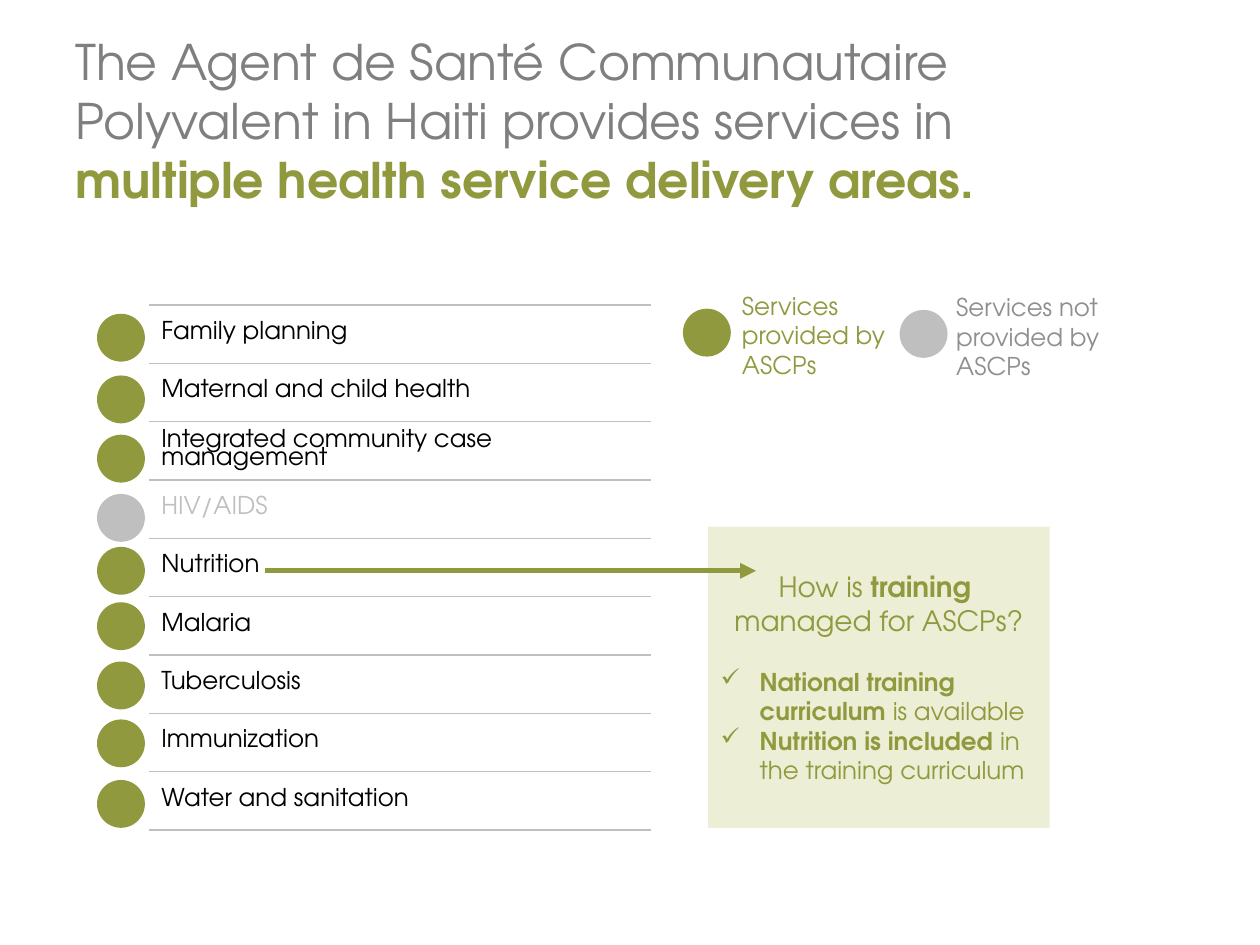
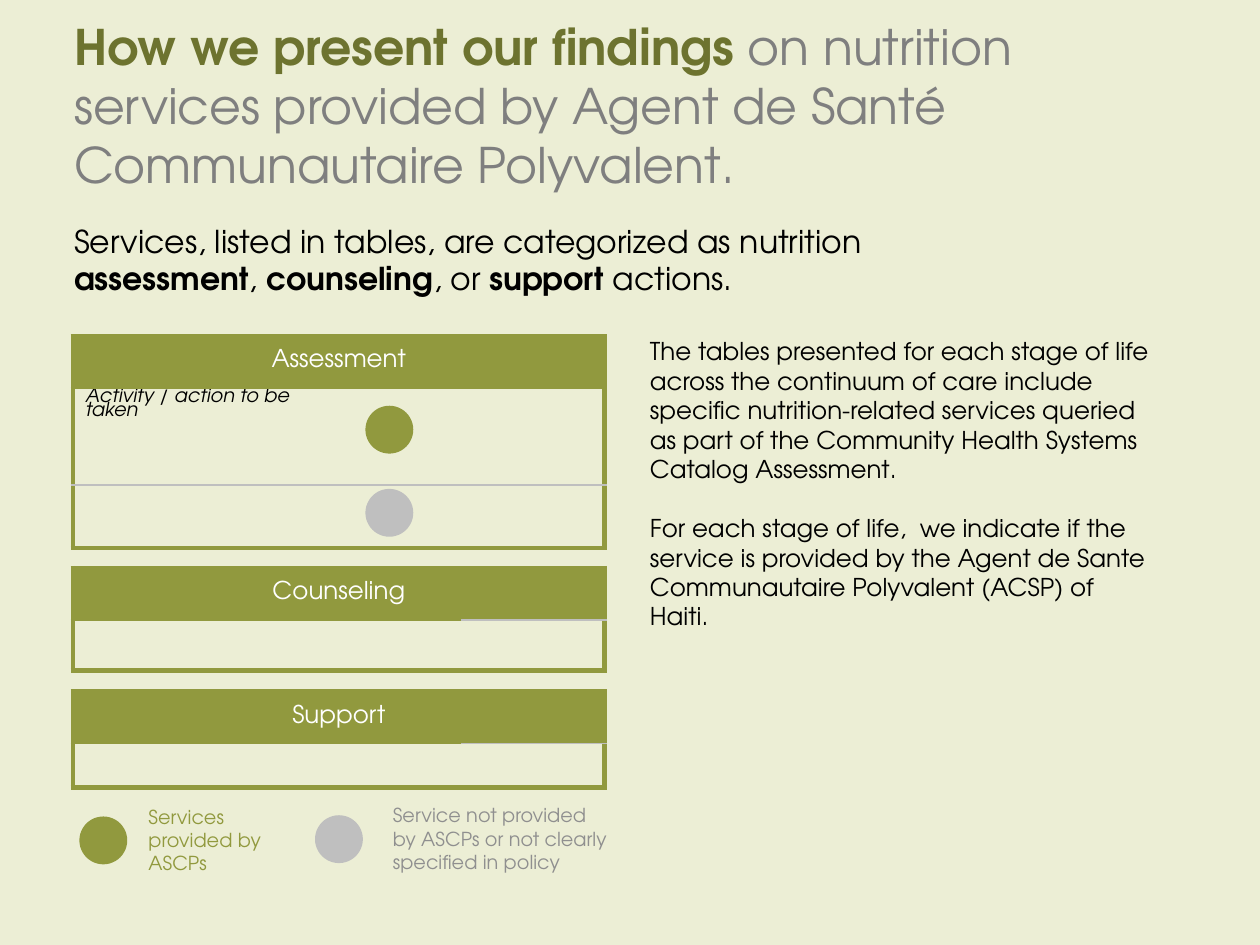
from lxml import etree
from pptx import Presentation
from pptx.dml.color import RGBColor
from pptx.enum.shapes import MSO_CONNECTOR, MSO_SHAPE
from pptx.enum.text import MSO_ANCHOR as ANCHOR, PP_ALIGN as ALIGN
from pptx.oxml.ns import qn
from pptx.util import Inches, Pt

FONT = "TeX Gyre Adventor"
GREEN = RGBColor(0x91, 0x99, 0x3E)
DARK_GREEN = RGBColor(0x6D, 0x73, 0x2F)
PALE_GREEN = RGBColor(0xEC, 0xEE, 0xD5)
TITLE_GRAY = RGBColor(0x7F, 0x7F, 0x7F)
LEGEND_GRAY = RGBColor(0x8F, 0x8F, 0x8F)
GRAY = RGBColor(0xBF, 0xBF, 0xBF)
BLACK = RGBColor(0, 0, 0)
WHITE = RGBColor(0xFF, 0xFF, 0xFF)

DOT_SIZE = 0.38
PARAGRAPH_GAP = 17
PLAIN_TABLE_STYLE = "{2D5ABB26-0587-4C30-8999-92F81FD0307C}"

SERVICES = [
    ("Family planning", 2.49),
    ("Maternal and child health", 2.98),
    ("Integrated community case management", 3.45),
    ("HIV/AIDS", 3.92),
    ("Nutrition", 4.34),
    ("Malaria", 4.78),
    ("Tuberculosis", 5.25),
    ("Immunization", 5.71),
    ("Water and sanitation", 6.19),
]
NOT_PROVIDED = {"HIV/AIDS"}


def write_runs(paragraph, marked_text, size, color, bold_color=None):
    """Write text whose **marked** parts are bold, optionally in another colour."""
    for index, part in enumerate(marked_text.split("**")):
        if not part:
            continue
        run = paragraph.add_run()
        run.text = part
        font = run.font
        font.name, font.size, font.bold = FONT, Pt(size), index % 2 == 1
        font.color.rgb = bold_color if font.bold and bold_color else color


def add_text(slide, box, paragraphs, size, color, bold_color=None, anchor=ANCHOR.TOP):
    """Add a wrapping text box with a gap between its paragraphs."""
    text_frame = slide.shapes.add_textbox(*map(Inches, box)).text_frame
    text_frame.word_wrap = True
    text_frame.vertical_anchor = anchor
    for index, marked_text in enumerate(paragraphs):
        paragraph = text_frame.add_paragraph() if index else text_frame.paragraphs[0]
        paragraph.space_before = Pt(PARAGRAPH_GAP if index else 0)
        write_runs(paragraph, marked_text, size, color, bold_color)


def add_title(slide, box, marked_text, bold_color):
    """Add the slide title with its emphasised part."""
    add_text(slide, box, [marked_text], 28, TITLE_GRAY, bold_color, ANCHOR.MIDDLE)


def add_filled_shape(slide, preset, box, color):
    """Add a preset shape with a flat fill and no outline."""
    shape = slide.shapes.add_shape(preset, *map(Inches, box))
    shape.shadow.inherit = False
    shape.fill.solid()
    shape.fill.fore_color.rgb = color
    shape.line.fill.background()
    return shape


def add_dot(slide, left, top, color):
    """Add a round service marker."""
    add_filled_shape(slide, MSO_SHAPE.OVAL, (left, top, DOT_SIZE, DOT_SIZE), color)


def add_legend(slide, dot, label_box, label, size, dot_color, label_color):
    """Add a marker and its explanation."""
    add_dot(slide, *dot, dot_color)
    add_text(slide, label_box, [label], size, label_color)


def add_table(slide, left, top, widths, heights):
    """Add an unstyled table with the given column widths and row heights."""
    box = map(Inches, (left, top, sum(widths), sum(heights)))
    table = slide.shapes.add_table(len(heights), len(widths), *box).table
    table.first_row = table.horz_banding = False
    table._tbl.tblPr.find(qn("a:tableStyleId")).text = PLAIN_TABLE_STYLE
    for column, width in zip(table.columns, widths):
        column.width = Inches(width)
    for row, height in zip(table.rows, heights):
        row.height = Inches(height)
    for cell in table.iter_cells():
        cell.margin_top = cell.margin_bottom = Inches(0.02)
    return table


def style_cell(cell, fill=None, **borders):
    """Set borders given as side=(colour, points), then the cell fill."""
    properties = cell._tc.get_or_add_tcPr()
    for side in "LRTB":
        if side in borders:
            color, width = borders[side]
            line = etree.SubElement(properties, qn(f"a:ln{side}"), w=str(Pt(width)))
            solid = etree.SubElement(line, qn("a:solidFill"))
            etree.SubElement(solid, qn("a:srgbClr"), val=str(color))
    if fill is None:
        cell.fill.background()
    else:
        cell.fill.solid()
        cell.fill.fore_color.rgb = fill


def write_cell(cell, text, size, color, anchor=ANCHOR.MIDDLE):
    """Write tightly spaced text in a table cell and return its paragraph."""
    cell.vertical_anchor = anchor
    paragraph = cell.text_frame.paragraphs[0]
    paragraph.line_spacing = 0.8
    write_runs(paragraph, text, size, color)
    return paragraph


def add_action_table(slide, top, heading, widths, heights, header_rule):
    """Add a framed table under a merged heading; header_rule colours its last column."""
    table = add_table(slide, 0.58, top, widths, heights)
    last_row, last_column = len(heights) - 1, len(widths) - 1
    for row in range(len(heights)):
        for column in range(len(widths)):
            rule = header_rule if column == last_column else GREEN
            borders = {
                "T": (GREEN, 3) if row == 0 else (rule if row == 1 else GRAY, 1),
                "B": (GREEN, 3) if row == last_row else (GRAY if row else rule, 1),
            }
            if column == 0:
                borders["L"] = (GREEN, 3)
            if column == last_column or row == 0:
                borders["R"] = (GREEN, 3)
            style_cell(table.cell(row, column), None if row else GREEN, **borders)
    table.cell(0, 0).merge(table.cell(0, last_column))
    write_cell(table.cell(0, 0), heading, 14, WHITE).alignment = ALIGN.CENTER
    return table


def add_service_list(slide):
    """Add the ruled list of services with a marker beside each."""
    height = 4.17 / len(SERVICES)
    table = add_table(slide, 0.67, 2.42, [0.51, 3.99], [height] * len(SERVICES))
    for row, (service, dot_top) in enumerate(SERVICES):
        missing = service in NOT_PROVIDED
        style_cell(table.cell(row, 0))
        style_cell(table.cell(row, 1), T=(GRAY, 1), B=(GRAY, 1))
        write_cell(table.cell(row, 1), service, 14, GRAY if missing else BLACK)
        add_dot(slide, 0.77, dot_top, GRAY if missing else GREEN)


def add_check_mark(paragraph):
    """Give a paragraph a hanging check mark bullet."""
    properties = paragraph._p.get_or_add_pPr()
    properties.set("marL", str(Inches(0.31)))
    properties.set("indent", str(-Inches(0.31)))
    etree.SubElement(properties, qn("a:buChar"), char="✓")


def add_training_panel(slide):
    """Add the panel that answers how training is managed."""
    panel = add_filled_shape(slide, MSO_SHAPE.RECTANGLE, (5.62, 4.18, 2.71, 2.39), PALE_GREEN)
    text_frame = panel.text_frame
    text_frame.word_wrap = True
    text_frame.vertical_anchor = ANCHOR.MIDDLE
    question = ["How is **training **", "managed for ASCPs?"]
    answers = [
        "**National training curriculum **is available",
        "**Nutrition is included** in the training curriculum",
    ]
    for index, marked_text in enumerate(question + answers):
        paragraph = text_frame.add_paragraph() if index else text_frame.paragraphs[0]
        is_answer = marked_text in answers
        paragraph.alignment = ALIGN.LEFT if is_answer else ALIGN.CENTER
        if marked_text == answers[0]:
            paragraph.space_before = Pt(PARAGRAPH_GAP)
        write_runs(paragraph, marked_text, 14 if is_answer else 16, GREEN)
        if is_answer:
            add_check_mark(paragraph)


def add_arrow(slide, start, end):
    """Add a thick green arrow between two points."""
    points = map(Inches, (*start, *end))
    connector = slide.shapes.add_connector(MSO_CONNECTOR.STRAIGHT, *points)
    connector.line.color.rgb = GREEN
    connector.line.width = Pt(3)
    etree.SubElement(connector.line._get_or_add_ln(), qn("a:tailEnd"), type="triangle")
    etree.SubElement(connector._element.spPr, qn("a:effectLst"))


def add_slide(presentation, background):
    """Add a blank slide with a plain background."""
    slide = presentation.slides.add_slide(presentation.slide_layouts[6])
    slide.background.fill.solid()
    slide.background.fill.fore_color.rgb = background
    return slide


def build_services_slide(presentation):
    """Show which health services the agents provide."""
    slide = add_slide(presentation, WHITE)
    add_title(
        slide, (0.5, 0.33, 8.67, 1.24),
        "The Agent de Santé Communautaire Polyvalent in Haiti provides services in "
        "**multiple health service delivery areas.**", GREEN)
    add_service_list(slide)
    add_legend(slide, (5.42, 2.45), (5.79, 2.26, 1.35, 0.81),
               "Services provided by ASCPs", 14, GREEN, GREEN)
    add_legend(slide, (7.14, 2.46), (7.49, 2.27, 1.35, 0.81),
               "Services not provided by ASCPs", 14, GRAY, LEGEND_GRAY)
    add_training_panel(slide)
    add_arrow(slide, (2.1, 4.53), (6, 4.53))


def build_findings_slide(presentation):
    """Explain how the nutrition findings are laid out."""
    slide = add_slide(presentation, PALE_GREEN)
    add_title(
        slide, (0.49, 0.49, 8.76, 0.68),
        "**How we present our findings **on nutrition services provided by "
        "Agent de Santé Communautaire Polyvalent.", DARK_GREEN)
    add_text(
        slide, (0.49, 1.71, 7.76, 0.71),
        ["Services, listed in tables, are categorized as nutrition "
         "**assessment**, **counseling**, or **support **actions."], 18, BLACK)
    add_text(
        slide, (5.06, 2.62, 4.19, 2.22),
        ["The tables presented for each stage of life across the continuum of care "
         "include specific nutrition-related services queried as part of the "
         "Community Health Systems Catalog Assessment.",
         "For each stage of life,  we indicate if the service is provided by the "
         "Agent de Sante Communautaire Polyvalent (ACSP) of Haiti."], 14, BLACK)

    assessment = add_action_table(
        slide, 2.67, "Assessment", [2.27, 0.5, 1.45], [0.41, 0.77, 0.5], GREEN)
    activity = write_cell(
        assessment.cell(1, 0), "Activity / action to be taken", 11, BLACK, ANCHOR.TOP)
    activity.runs[0].font.italic = True
    add_action_table(slide, 4.51, "Counseling", [3.08, 1.14], [0.41, 0.4], GRAY)
    add_action_table(slide, 5.49, "Support", [3.08, 1.14], [0.41, 0.35], GRAY)

    add_dot(slide, 2.9, 3.22, GREEN)
    add_dot(slide, 2.9, 3.88, GRAY)
    add_legend(slide, (0.63, 6.48), (1.08, 6.34, 1.35, 0.66),
               "Services provided by ASCPs", 11, GREEN, GREEN)
    add_legend(slide, (2.5, 6.47), (3.02, 6.33, 1.9, 0.66),
               "Service not provided by ASCPs or not clearly specified in policy",
               11, GRAY, LEGEND_GRAY)


def main():
    """Build and save the presentation."""
    presentation = Presentation()
    presentation.slide_width = Inches(10)
    presentation.slide_height = Inches(7.5)
    build_services_slide(presentation)
    build_findings_slide(presentation)
    presentation.save("out.pptx")


if __name__ == "__main__":
    main()
